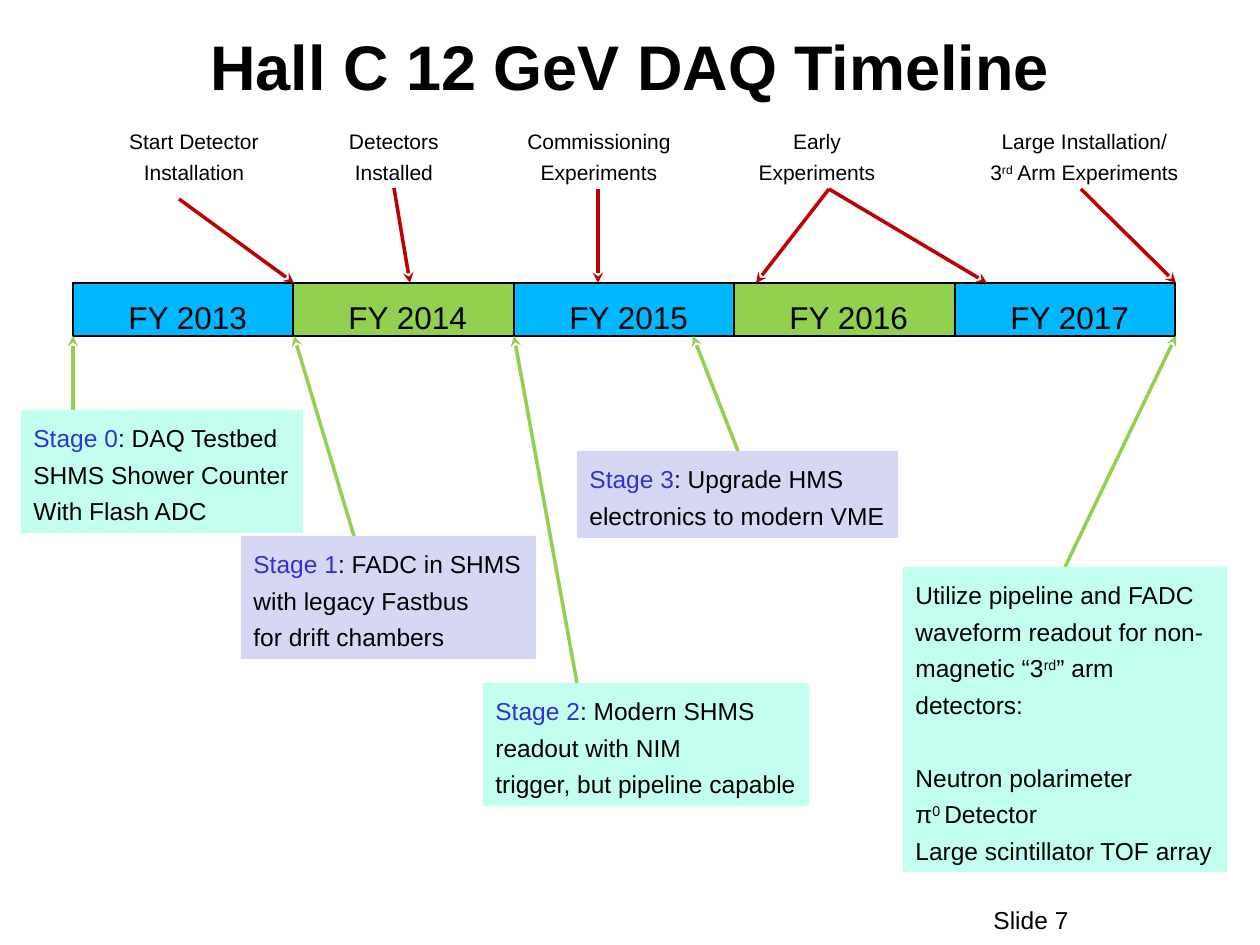
from itertools import cycle, pairwise

from lxml.etree import SubElement
from pptx import Presentation
from pptx.dml.color import RGBColor
from pptx.enum.shapes import MSO_CONNECTOR, MSO_SHAPE
from pptx.enum.text import MSO_ANCHOR, MSO_AUTO_SIZE, PP_ALIGN
from pptx.oxml.ns import qn
from pptx.util import Emu, Pt

BLACK = RGBColor(0x00, 0x00, 0x00)
BLUE = RGBColor(0x00, 0xB8, 0xFF)
GREEN = RGBColor(0x92, 0xD0, 0x50)
RED = RGBColor(0xC0, 0x00, 0x00)
INDIGO = RGBColor(0x33, 0x33, 0xCC)
MINT = RGBColor(0xC2, 0xFF, 0xF0)
LAVENDER = RGBColor(0xD6, 0xD6, 0xF5)

BAR_TOP, BAR_BOTTOM = 283, 336
YEAR_EDGES = [73 + 441 * step // 2 for step in range(6)]

MILESTONES = [
    (116, 156, ["Start Detector", "Installation"]),
    (336, 116, ["Detectors", "Installed"]),
    (514, 170, ["Commissioning", "Experiments"]),
    (746, 142, ["Early", "Experiments"]),
    (976, 217, ["Large Installation/", "3^rd^ Arm Experiments"]),
]
MILESTONE_ARROWS = [
    (179, 199, 294), (394, 188, 410), (598, 189, 598),
    (829, 189, 987), (829, 189, 756), (1081, 189, 1176),
]
STAGE_ARROWS = [
    (73, 410, 73), (1065, 567, 1176), (738, 451, 693),
    (577, 683, 514), (357, 546, 294),
]
STAGES = [
    (21, 410, 282, 123, MINT, "Stage 0",
     [": DAQ Testbed", "SHMS Shower Counter", "With Flash ADC"]),
    (241, 536, 295, 123, LAVENDER, "Stage 1",
     [": FADC in SHMS", "with legacy Fastbus", "for drift chambers"]),
    (483, 683, 326, 123, MINT, "Stage 2",
     [": Modern SHMS", "readout with NIM", "trigger, but pipeline capable"]),
    (577, 451, 321, 87, LAVENDER, "Stage 3",
     [": Upgrade HMS", "electronics to modern VME"]),
]
THIRD_ARM = [
    "Utilize pipeline and FADC waveform readout for non-magnetic “3^rd^” arm detectors:",
    "Neutron polarimeter",
    "π^0 ^Detector",
    "Large scintillator TOF array",
]


class TimelinePage:
    """Draws styled timeline elements on one page, with lengths in px."""

    font = "Arial"
    scale = 914400 / 126

    def __init__(self, deck):
        deck.slide_width, deck.slide_height = self.emu(1260, 945)
        self.page = deck.slides.add_slide(deck.slide_layouts[6])

    def emu(self, *lengths):
        return [Emu(round(length * self.scale)) for length in lengths]

    def span(self, para, text, size, color=BLACK, bold=False, raised=False):
        run = para.add_run()
        run.text = text
        run.font.name = self.font
        run.font.size = Pt(size)
        run.font.bold = bold
        run.font.color.rgb = color
        if raised:
            run._r.get_or_add_rPr().set("baseline", "30000")

    def set_lines(self, box, lines, size, align=PP_ALIGN.LEFT, spacing=1.24,
                  lead="", bold=False, wrap=False, anchor=MSO_ANCHOR.TOP):
        frame = box.text_frame
        frame.word_wrap = wrap
        frame.auto_size = MSO_AUTO_SIZE.NONE if wrap else MSO_AUTO_SIZE.SHAPE_TO_FIT_TEXT
        frame.vertical_anchor = anchor
        for index, line in enumerate(lines):
            para = frame.add_paragraph() if index else frame.paragraphs[0]
            para.alignment = align
            para.line_spacing = spacing
            if lead and not index:
                self.span(para, lead, size, INDIGO)
            for part, text in enumerate(line.split("^")):
                self.span(para, text, size, bold=bold, raised=part % 2 == 1)
        return frame

    def label(self, left, top, width, height, lines, size, **style):
        box = self.page.shapes.add_textbox(*self.emu(left, top, width, height))
        return self.set_lines(box, lines, size, **style)

    def block(self, left, top, width, height, fill, outline=None):
        box = self.page.shapes.add_shape(
            MSO_SHAPE.RECTANGLE, *self.emu(left, top, width, height))
        box.shadow.inherit = False
        box.fill.solid()
        box.fill.fore_color.rgb = fill
        if outline is None:
            box.line.fill.background()
        else:
            box.line.color.rgb = outline
            box.line.width = Pt(0.75)
        return box

    def note(self, left, top, width, height, fill, lines, **style):
        box = self.block(left, top, width, height, fill)
        return self.set_lines(box, lines, 14, **style)

    def arrow(self, start_x, start_y, end_x, end_y, color):
        line = self.page.shapes.add_connector(
            MSO_CONNECTOR.STRAIGHT, *self.emu(start_x, start_y, end_x, end_y))
        line.line.color.rgb = color
        line.line.width = Pt(2)
        properties = line._element.spPr
        SubElement(properties.find(qn("a:ln")), qn("a:tailEnd"), type="stealth")
        SubElement(properties, qn("a:effectLst"))


def main():
    deck = Presentation()
    timeline = TimelinePage(deck)

    title = timeline.label(95, 10, 1070, 105, ["Hall C 12 GeV DAQ Timeline"], 36,
                           align=PP_ALIGN.CENTER, spacing=1.08, bold=True,
                           wrap=True, anchor=MSO_ANCHOR.MIDDLE)
    title.margin_left = title.margin_right = title.margin_top = title.margin_bottom = 0
    timeline.label(882, 895, 199, 50, ["Slide 7"], 14, align=PP_ALIGN.RIGHT,
                   spacing=1.0, wrap=True, anchor=MSO_ANCHOR.MIDDLE)

    years = zip(pairwise(YEAR_EDGES), cycle([BLUE, GREEN]))
    for year, ((left, right), fill) in enumerate(years, 2013):
        timeline.block(left, BAR_TOP, right - left, BAR_BOTTOM - BAR_TOP, fill, BLACK)
        timeline.label(left + 43, BAR_TOP, 145, 55, [f"FY {year}"], 18)

    for left, width, lines in MILESTONES:
        timeline.label(left, 116, width, 73, lines, 12, align=PP_ALIGN.CENTER)
    for start_x, start_y, end_x in MILESTONE_ARROWS:
        timeline.arrow(start_x, start_y, end_x, BAR_TOP, RED)
    for start_x, start_y, end_x in STAGE_ARROWS:
        timeline.arrow(start_x, start_y, end_x, BAR_BOTTOM, GREEN)

    for left, top, width, height, fill, lead, lines in STAGES:
        timeline.note(left, top, width, height, fill, lines, lead=lead)
    third_arm = timeline.note(903, 567, 324, 305, MINT, THIRD_ARM, wrap=True)
    third_arm.paragraphs[1].space_before = Pt(21)

    deck.save("out.pptx")


if __name__ == "__main__":
    main()
